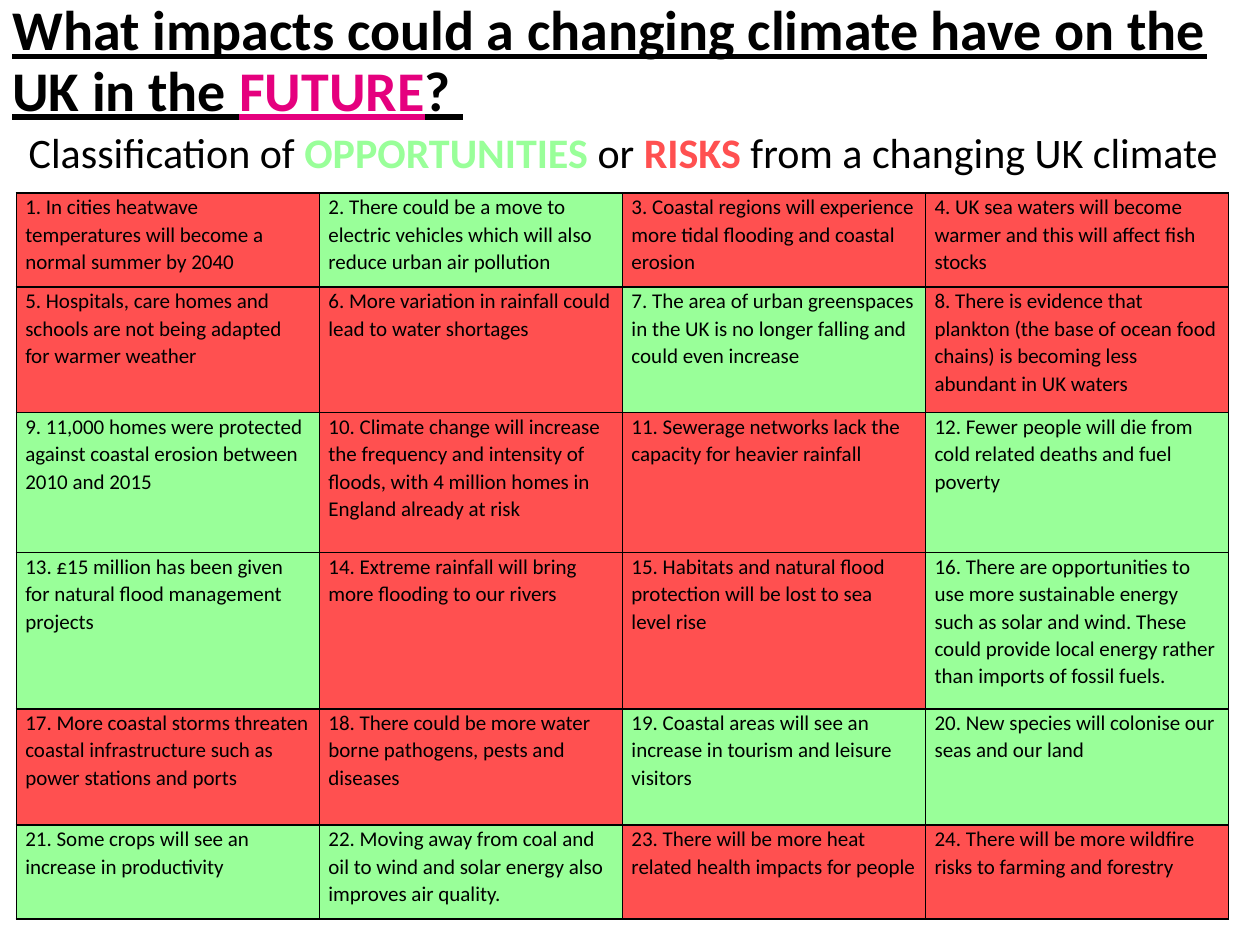
"""Build a slide that sorts UK climate impacts into opportunities and risks."""
from lxml.etree import SubElement
from pptx import Presentation
from pptx.dml.color import RGBColor
from pptx.enum.text import MSO_ANCHOR
from pptx.oxml.ns import qn
from pptx.util import Cm, Pt

BLACK, PINK, GREEN, RED = "000000", "E5007E", "99FF99", "FF5050"
FONT = "Calibri"

TITLE = [
    ("What impacts could a changing climate have on the UK in the ", BLACK, True),
    ("FUTURE", PINK, True),
    ("? ", BLACK, True),
]
SUBTITLE = [
    ("Classification of ", BLACK, False),
    ("OPPORTUNITIES", GREEN, True),
    (" or ", BLACK, False),
    ("RISKS ", RED, True),
    ("from a changing UK climate", BLACK, False),
]
IMPACTS = [
    "In cities heatwave temperatures will become a normal summer by 2040",
    "There could be a move to electric vehicles which will also reduce urban air pollution",
    "Coastal regions will experience more tidal flooding and coastal erosion",
    "UK sea waters will become warmer and this will affect fish stocks",
    "Hospitals, care homes and schools are not being adapted for warmer weather",
    "More variation in rainfall could lead to water shortages",
    "The area of urban greenspaces in the UK is no longer falling and could even increase",
    "There is evidence that plankton (the base of ocean food chains) is becoming less "
    "abundant in UK waters",
    "11,000 homes were protected against coastal erosion between 2010 and 2015",
    "Climate change will increase the frequency and intensity of floods, with 4 million "
    "homes in England already at risk",
    "Sewerage networks lack the capacity for heavier rainfall",
    "Fewer people will die from cold related deaths and fuel poverty",
    "£15 million has been given for natural flood management projects",
    "Extreme rainfall will bring more flooding to our rivers",
    "Habitats and natural flood protection will be lost to sea level rise",
    "There are opportunities to use more sustainable energy such as solar and wind. These "
    "could provide local energy rather than imports of fossil fuels.",
    "More coastal storms threaten coastal infrastructure such as power stations and ports",
    "There could be more water borne pathogens, pests and diseases",
    "Coastal areas will see an increase in tourism and leisure visitors",
    "New species will colonise our seas and our land",
    "Some crops will see an increase in productivity",
    "Moving away from coal and oil to wind and solar energy also improves air quality.",
    "There will be more heat related health impacts for people",
    "There will be more wildfire risks to farming and forestry",
]
OPPORTUNITIES = {2, 7, 9, 12, 13, 16, 19, 20, 21, 22}
COLUMNS = 4
COLUMN_WIDTH = 6.11
ROW_HEIGHTS = [1.9, 2.53, 2.82, 3.15, 2.34, 1.9]


def rgb(hex_colour):
    return RGBColor.from_string(hex_colour)


def write(paragraph, runs, size, spacing, underline=False):
    paragraph.line_spacing = spacing
    for words, colour, bold in runs:
        run = paragraph.add_run()
        run.text = words
        run.font.name = FONT
        run.font.size = Pt(size)
        run.font.bold = bold
        run.font.underline = underline
        run.font.color.rgb = rgb(colour)


def add_heading(slide, place, runs, size, anchor, underline=False):
    frame = slide.shapes.add_textbox(*map(Cm, place)).text_frame
    frame.word_wrap = True
    frame.vertical_anchor = anchor
    write(frame.paragraphs[0], runs, size, 0.9, underline)


def set_borders(cell):
    properties = cell._tc.get_or_add_tcPr()
    for position, side in enumerate(("a:lnL", "a:lnR", "a:lnT", "a:lnB")):
        border = SubElement(properties, qn(side), w=str(Pt(1)))
        fill = SubElement(border, qn("a:solidFill"))
        SubElement(fill, qn("a:srgbClr"), val=BLACK)
        properties.insert(position, border)


def add_impacts(slide):
    table = slide.shapes.add_table(
        len(ROW_HEIGHTS), COLUMNS, Cm(0.33), Cm(3.89),
        Cm(COLUMN_WIDTH * COLUMNS), Cm(sum(ROW_HEIGHTS)),
    ).table
    table.first_row = table.horz_banding = False
    for column in table.columns:
        column.width = Cm(COLUMN_WIDTH)
    for row, height in zip(table.rows, ROW_HEIGHTS):
        row.height = Cm(height)
    for number, impact in enumerate(IMPACTS, 1):
        cell = table.cell(*divmod(number - 1, COLUMNS))
        cell.margin_left = cell.margin_right = Cm(0.18)
        cell.margin_top = cell.margin_bottom = 0
        cell.fill.solid()
        cell.fill.fore_color.rgb = rgb(GREEN if number in OPPORTUNITIES else RED)
        set_borders(cell)
        write(cell.text_frame.paragraphs[0], [(f"{number}. {impact}", BLACK, False)], 12, 1.07)


def main():
    deck = Presentation()
    deck.slide_width, deck.slide_height = Cm(25.4), Cm(19.05)
    slide = deck.slides.add_slide(deck.slide_layouts[6])
    add_heading(slide, (0, 0, 25.6, 2.54), TITLE, 32, MSO_ANCHOR.MIDDLE, underline=True)
    add_heading(slide, (0.33, 2.54, 25.07, 3.38), SUBTITLE, 24, MSO_ANCHOR.TOP)
    add_impacts(slide)
    deck.save("out.pptx")


if __name__ == "__main__":
    main()
